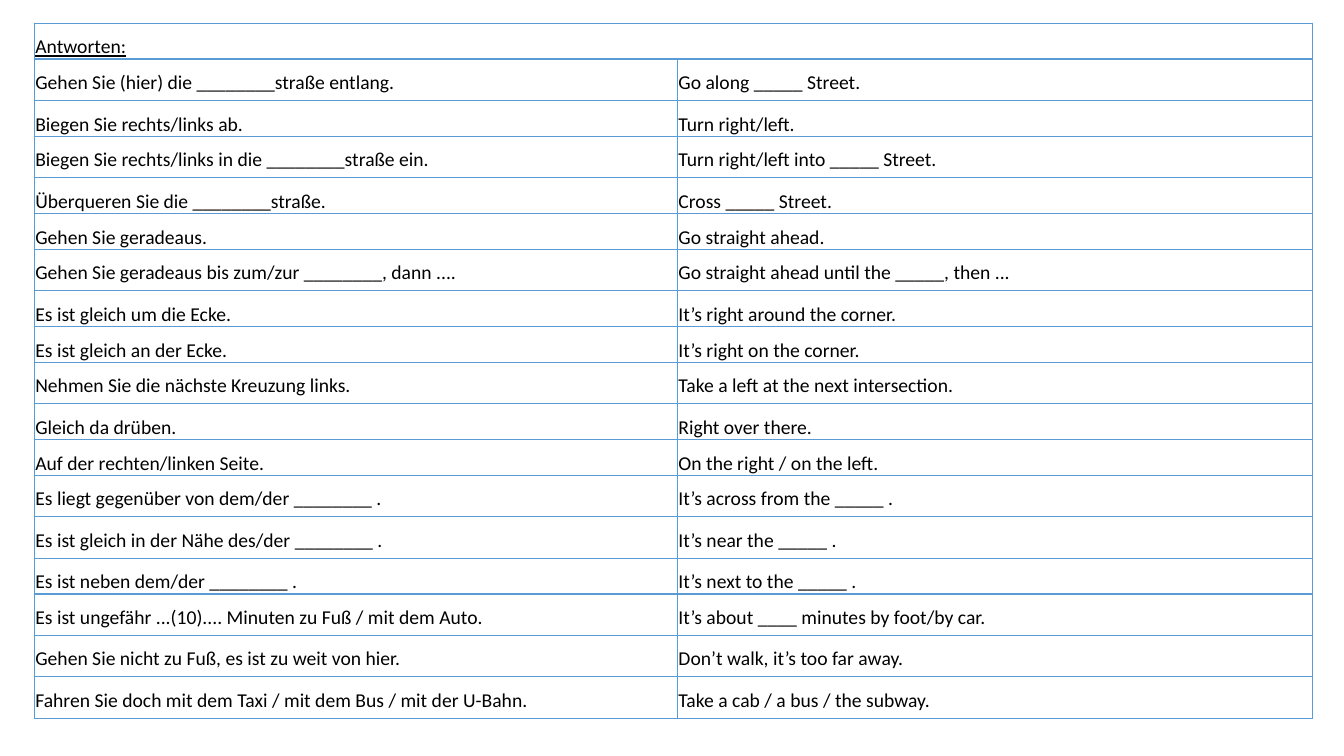
from lxml import etree
from pptx import Presentation
from pptx import util as u
from pptx.dml import color
from pptx.enum import text
from pptx.oxml import ns

HEADING = "Antworten:"
PHRASES = [
    ("Gehen Sie (hier) die ________straße entlang.", "Go along _____ Street."),
    ("Biegen Sie rechts/links ab.", "Turn right/left."),
    ("Biegen Sie rechts/links in die ________straße ein.", "Turn right/left into _____ Street."),
    ("Überqueren Sie die ________straße.", "Cross _____ Street."),
    ("Gehen Sie geradeaus.", "Go straight ahead."),
    ("Gehen Sie geradeaus bis zum/zur ________, dann ....",
     "Go straight ahead until the _____, then ..."),
    ("Es ist gleich um die Ecke.", "It’s right around the corner."),
    ("Es ist gleich an der Ecke.", "It’s right on the corner."),
    ("Nehmen Sie die nächste Kreuzung links.", "Take a left at the next intersection."),
    ("Gleich da drüben.", "Right over there."),
    ("Auf der rechten/linken Seite.", "On the right / on the left."),
    ("Es liegt gegenüber von dem/der ________ .", "It’s across from the _____ ."),
    ("Es ist gleich in der Nähe des/der ________ .", "It’s near the _____ ."),
    ("Es ist neben dem/der ________ .", "It’s next to the _____ ."),
    ("Es ist ungefähr ...(10).... Minuten zu Fuß / mit dem Auto.",
     "It’s about ____ minutes by foot/by car."),
    ("Gehen Sie nicht zu Fuß, es ist zu weit von hier.", "Don’t walk, it’s too far away."),
    ("Fahren Sie doch mit dem Taxi / mit dem Bus / mit der U-Bahn.",
     "Take a cab / a bus / the subway."),
]
COLUMN_WIDTHS = (459.4, 453.6)
LOW_ROW, TALL_ROW = 23.8, 29.6
TALL_ROWS = {1, 3, 6, 9, 12, 13, 15, 16, 17}


def rgb(value):
    return color.RGBColor.from_string(value)


class SlideBuilder:
    font_name = "Calibri"
    font_size = 14
    ink = "000000"
    border = "5B9BD5"

    def __init__(self, slide):
        self.slide = slide

    def add_borders(self, cell):
        properties = cell._tc.get_or_add_tcPr()
        for index, side in enumerate(("lnL", "lnR", "lnT", "lnB")):
            line = etree.Element(ns.qn(f"a:{side}"), w=str(u.Pt(1)))
            fill = etree.SubElement(line, ns.qn("a:solidFill"))
            etree.SubElement(fill, ns.qn("a:srgbClr"), val=self.border)
            properties.insert(index, line)

    def format_cell(self, cell):
        cell.margin_left = cell.margin_right = u.Pt(0.75)
        cell.margin_top = cell.margin_bottom = 0
        cell.vertical_anchor = text.MSO_ANCHOR.TOP
        cell.fill.background()
        self.add_borders(cell)

    def fill_cell(self, cell, wording, underline=False):
        cell.text_frame.text = wording
        paragraph = cell.text_frame.paragraphs[0]
        paragraph.line_spacing = 1.5
        font = paragraph.runs[0].font
        font.name = self.font_name
        font.size = u.Pt(self.font_size)
        font.color.rgb = rgb(self.ink)
        font.underline = underline

    def add_phrase_table(self, left, top, widths, heights, heading, phrases):
        frame = self.slide.shapes.add_table(
            len(heights), len(widths), u.Pt(left), u.Pt(top),
            u.Pt(sum(widths)), u.Pt(sum(heights)))
        table = frame.table
        table.first_row = table.horz_banding = False
        for column, width in zip(table.columns, widths):
            column.width = u.Pt(width)
        for row, height in zip(table.rows, heights):
            row.height = u.Pt(height)
        for cell in table.iter_cells():
            self.format_cell(cell)

        # Heading across both columns
        table.cell(0, 0).merge(table.cell(0, len(widths) - 1))
        self.fill_cell(table.cell(0, 0), heading, underline=True)

        # German phrases with their English meaning
        for row_index, pair in enumerate(phrases, start=1):
            for column_index, wording in enumerate(pair):
                self.fill_cell(table.cell(row_index, column_index), wording)


def main():
    presentation = Presentation()
    presentation.slide_width = u.Pt(960)
    presentation.slide_height = u.Pt(540)
    slide = presentation.slides.add_slide(presentation.slide_layouts[6])

    # Phrase table
    heights = [TALL_ROW if index in TALL_ROWS else LOW_ROW
               for index in range(len(PHRASES) + 1)]
    SlideBuilder(slide).add_phrase_table(
        24.5, 16.6, COLUMN_WIDTHS, heights, HEADING, PHRASES)

    presentation.save("out.pptx")


if __name__ == "__main__":
    main()
